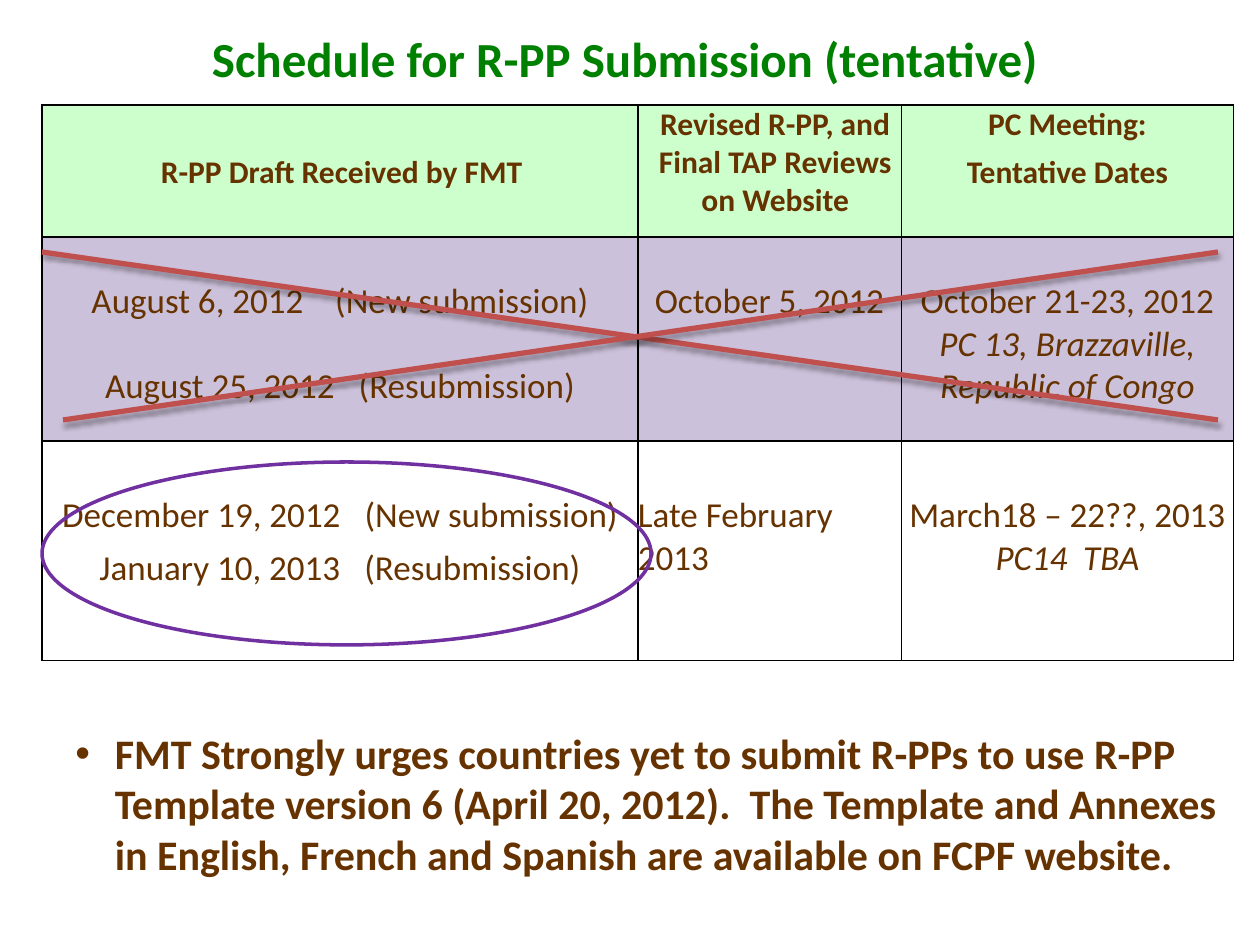
from dataclasses import dataclass

from lxml.etree import SubElement
from pptx import Presentation
from pptx.dml.color import RGBColor as Color
from pptx.enum.shapes import MSO_CONNECTOR as Connector, MSO_SHAPE as Shape
from pptx.enum.text import MSO_ANCHOR as Anchor, PP_ALIGN as Align
from pptx.oxml.ns import qn
from pptx.util import Pt


@dataclass(frozen=True)
class Theme:
    font: str = "Calibri"
    title: str = "008000"
    brown: str = "663300"
    header_fill: str = "CCFFCC"
    past_fill: str = "CCC1DA"
    border: str = "000000"
    cross: str = "C0504D"
    ring: str = "7030A0"
    title_size: int = 28
    note_size: int = 24
    date_size: int = 20
    header_size: int = 18


THEME = Theme()
COLUMNS = (340.5, 150.5, 190)
ROWS = (75.5, 116.5, 125.5)


@dataclass(frozen=True)
class Line:
    """One paragraph of a cell; note follows text after a wide gap."""
    text: str
    before: float = 0
    indent: float = 0
    italic: bool = False
    align: Align = Align.CENTER
    note: str = ""
    gap: float = 9


@dataclass(frozen=True)
class Row:
    tops: tuple
    cells: tuple
    size: int
    fill: str = ""
    bold: bool = False


SCHEDULE = (
    Row((28, 0, 0), (
        (Line("R-PP Draft Received by FMT", indent=2),),
        (Line("Revised R-PP, and Final TAP Reviews on Website", indent=6.5),),
        (Line("PC Meeting:"), Line("Tentative Dates", before=6)),
    ), THEME.header_size, THEME.header_fill, True),
    Row((24.4,) * 3, (
        (Line("August 6, 2012", note="(New submission)", gap=13.5),
         Line("August 25, 2012", before=24.4, note="(Resubmission)")),
        (Line("October 5, 2012"),),
        (Line("October 21-23, 2012"),
         Line("PC 13, Brazzaville, Republic of Congo", italic=True)),
    ), THEME.date_size, THEME.past_fill),
    Row((30.4,) * 3, (
        (Line("December 19, 2012", note="(New submission)"),
         Line("January 10, 2013", before=6, note="(Resubmission)")),
        (Line("Late February", align=Align.LEFT),
         Line("2013", align=Align.LEFT)),
        (Line("March18 – 22??, 2013"), Line("PC14  TBA", italic=True)),
    ), THEME.date_size),
)


def style(para, size, color, bold=False, italic=False):
    font = para.font
    font.name, font.size = THEME.font, Pt(size)
    font.bold, font.italic = bold, italic
    font.color.rgb = Color.from_string(color)


def add_text(page, left, top, width, height, text, anchor):
    box = page.shapes.add_textbox(Pt(left), Pt(top), Pt(width), Pt(height))
    frame = box.text_frame
    frame.word_wrap = True
    frame.vertical_anchor = anchor
    frame.text = text
    return frame.paragraphs[0]


def add_bullet(para, hang):
    props = para._p.get_or_add_pPr()
    props.set("marL", str(Pt(hang)))
    props.set("indent", str(-Pt(hang)))
    SubElement(props, qn("a:buFont"), typeface="Arial")
    SubElement(props, qn("a:buChar"), char="•")


def add_solid(parent, color):
    fill = SubElement(parent, qn("a:solidFill"))
    return SubElement(fill, qn("a:srgbClr"), val=color)


def fill_cell(cell, top, lines, row):
    cell.margin_left = cell.margin_right = cell.margin_bottom = 0
    cell.margin_top = Pt(top)
    props = cell._tc.get_or_add_tcPr()
    for side in ("lnL", "lnR", "lnT", "lnB"):
        add_solid(SubElement(props, qn(f"a:{side}"), w=str(Pt(1))), THEME.border)
    if row.fill:
        cell.fill.solid()
        cell.fill.fore_color.rgb = Color.from_string(row.fill)
    else:
        cell.fill.background()
    frame = cell.text_frame
    for index, line in enumerate(lines):
        para = frame.add_paragraph() if index else frame.paragraphs[0]
        para.alignment = line.align
        if line.before:
            para.space_before = Pt(line.before)
        if line.indent:
            para._p.get_or_add_pPr().set("marL", str(Pt(line.indent)))
        para.add_run().text = line.text
        if line.note:
            space = para.add_run()
            space.text = " "
            space.font._element.set("spc", str(int(line.gap * 100)))
            para.add_run().text = line.note
        style(para, row.size, THEME.brown, row.bold, line.italic)


def add_schedule(page, left, top):
    table = page.shapes.add_table(len(ROWS), len(COLUMNS), Pt(left), Pt(top),
                                  Pt(sum(COLUMNS)), Pt(sum(ROWS))).table
    table.first_row = table.horz_banding = False
    for column, width in zip(table.columns, COLUMNS):
        column.width = Pt(width)
    for table_row, height, row in zip(table.rows, ROWS, SCHEDULE):
        table_row.height = Pt(height)
        for cell, top_margin, lines in zip(table_row.cells, row.tops, row.cells):
            fill_cell(cell, top_margin, lines, row)


def add_ring(page, left, top, width, height):
    ring = page.shapes.add_shape(Shape.OVAL, Pt(left), Pt(top), Pt(width), Pt(height))
    ring.shadow.inherit = False
    ring.fill.background()
    ring.line.color.rgb = Color.from_string(THEME.ring)
    ring.line.width = Pt(2)


def add_strike(page, *ends):
    """Draw a thick line with a soft shadow below it."""
    strike = page.shapes.add_connector(Connector.STRAIGHT, *map(Pt, ends))
    strike.line.color.rgb = Color.from_string(THEME.cross)
    strike.line.width = Pt(3)
    effects = SubElement(strike._element.spPr, qn("a:effectLst"))
    shadow = SubElement(effects, qn("a:outerShdw"), blurRad=str(Pt(3.1)),
                        dist=str(Pt(1.8)), dir="5400000", rotWithShape="0")
    color = SubElement(shadow, qn("a:srgbClr"), val="000000")
    SubElement(color, qn("a:alpha"), val="35000")


def main():
    deck = Presentation()
    deck.slide_width, deck.slide_height = Pt(720), Pt(540)
    page = deck.slides.add_slide(deck.slide_layouts[6])

    add_schedule(page, 24, 60)
    title = add_text(page, 114, 12.5, 492, 63,
                     "Schedule for R-PP Submission (tentative)", Anchor.TOP)
    style(title, THEME.title_size, THEME.title, bold=True)
    add_ring(page, 24, 264, 348, 104.5)
    note = add_text(page, 36, 408, 672, 102,
                    "FMT Strongly urges countries yet to submit R-PPs to use R-PP "
                    "Template version 6 (April 20, 2012).  The Template and Annexes "
                    "in English, French and Spanish are available on FCPF website.",
                    Anchor.MIDDLE)
    add_bullet(note, 22.5)
    style(note, THEME.note_size, THEME.brown, bold=True)
    add_strike(page, 24, 144, 696, 240)
    add_strike(page, 36, 240, 696, 144)

    deck.save("out.pptx")


if __name__ == "__main__":
    main()
